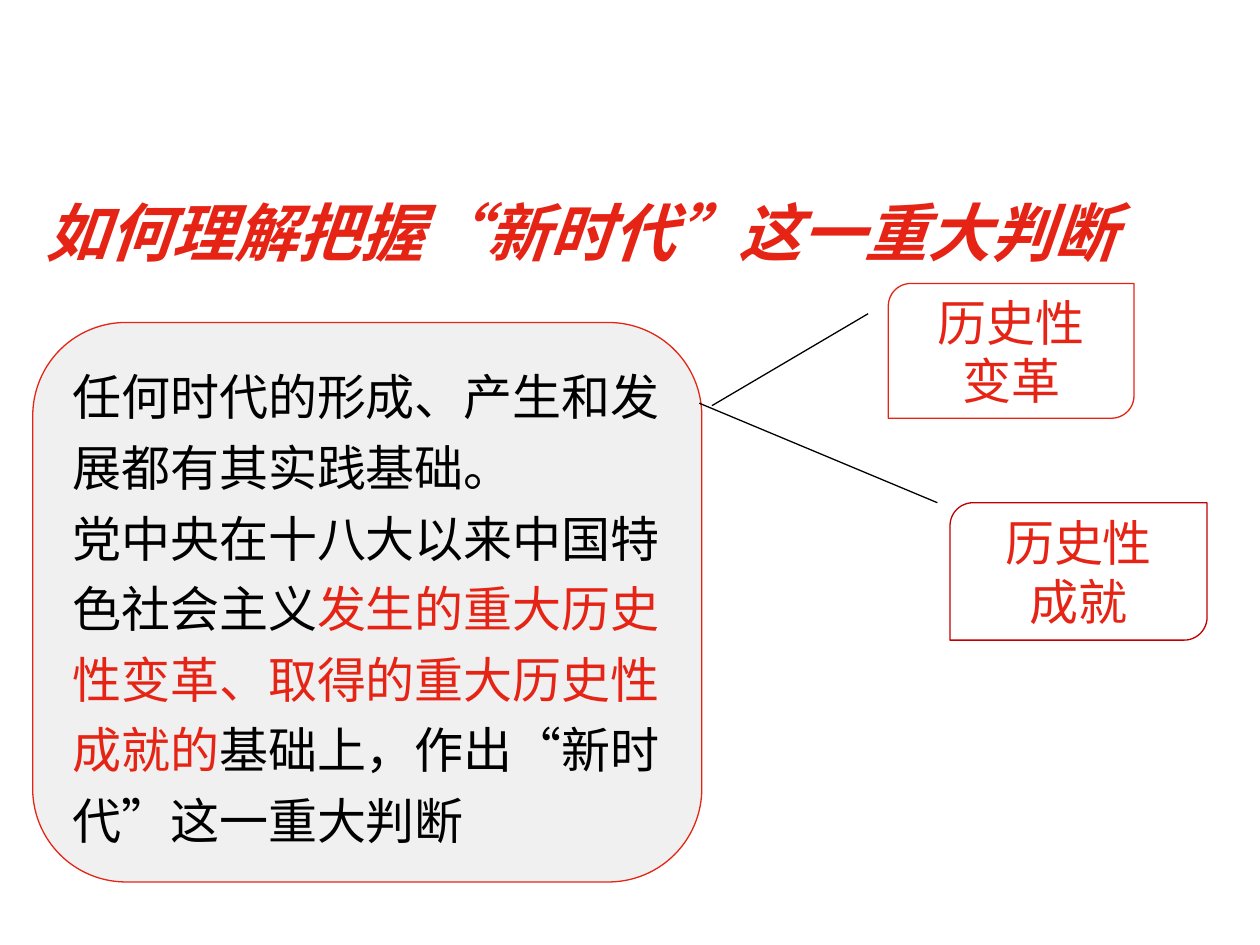
from lxml import etree
from pptx import Presentation
from pptx.dml.color import RGBColor
from pptx.enum.shapes import MSO_CONNECTOR as Connector, MSO_SHAPE as Shape
from pptx.enum.text import MSO_ANCHOR as Anchor, PP_ALIGN as Align
from pptx.oxml.ns import qn
from pptx.util import Inches, Pt

RED, DARK_RED, BLACK = "E52415", "C00000", "000000"
GREY, WHITE = "F0F0F0", "FFFFFF"
CHINESE_FONT = "Noto Sans CJK SC"


def color(value):
    return RGBColor.from_string(value)


def add_run(paragraph, text, size=28, font="Arial", fill=RED, bold=False, italic=False):
    run = paragraph.add_run()
    run.text = text
    run.font.size = Pt(size)
    run.font.name = font
    run.font.bold = bold
    run.font.italic = italic
    run.font.color.rgb = color(fill)
    properties = run._r.get_or_add_rPr()
    properties.set("lang", "zh-CN")
    latin = properties.find(qn("a:latin"))
    east_asian = etree.Element(qn("a:ea"), typeface=CHINESE_FONT)
    latin.addnext(east_asian)


class SlideBuilder:
    line_width = Pt(0.75)

    def __init__(self, slide):
        self.slide = slide

    def fill_text(self, frame, paragraphs, align=Align.LEFT, spacing=1.0):
        frame.word_wrap = True
        for index, runs in enumerate(paragraphs):
            paragraph = frame.add_paragraph() if index else frame.paragraphs[0]
            paragraph.alignment = align
            paragraph.line_spacing = spacing
            for text, style in runs:
                add_run(paragraph, text, **style)

    def text(self, bounds, paragraphs, **layout):
        box = self.slide.shapes.add_textbox(*map(Inches, bounds))
        self.fill_text(box.text_frame, paragraphs, **layout)

    def panel(self, kind, bounds, paragraphs, fill=WHITE, line=RED, **layout):
        shape = self.slide.shapes.add_shape(kind, *map(Inches, bounds))
        shape.shadow.inherit = False
        shape.fill.solid()
        shape.fill.fore_color.rgb = color(fill)
        shape.line.color.rgb = color(line)
        shape.line.width = self.line_width
        shape.text_frame.vertical_anchor = Anchor.MIDDLE
        self.fill_text(shape.text_frame, paragraphs, **layout)

    def connector(self, start, end):
        points = map(Inches, (*start, *end))
        line = self.slide.shapes.add_connector(Connector.STRAIGHT, *points)
        line.line.color.rgb = color(BLACK)
        line.line.width = self.line_width
        etree.SubElement(line._element.spPr, qn("a:effectLst"))


def main():
    presentation = Presentation()
    presentation.slide_width = Inches(10)
    presentation.slide_height = Inches(7.5)
    builder = SlideBuilder(presentation.slides.add_slide(presentation.slide_layouts[6]))

    title_style = dict(size=36, font=CHINESE_FONT, bold=True, italic=True)
    builder.text(
        (0.26, 1.19, 9.48, 1.01),
        [[("如何理解把握“新时代”这一重大判断", title_style)]],
        spacing=1.5,
    )

    plain, emphasis = dict(fill=BLACK), dict(fill=RED)
    builder.panel(
        Shape.ROUNDED_RECTANGLE,
        (0.26, 2.56, 5.31, 4.44),
        [
            [("任何时代的形成、产生和发展都有其实践基础。", plain)],
            [
                ("党中央在十八大以来中国特色社会主义", plain),
                ("发生的重大历史性变革、取得的重大历史性成就的", emphasis),
                ("基础上，作出“新时代”这一重大判断", plain),
            ],
        ],
        fill=GREY,
        spacing=1.2,
    )

    builder.connector((5.65, 3.22), (6.89, 2.49))
    builder.connector((5.55, 3.2), (7.44, 3.99))

    outcomes = [
        ((7.05, 2.25, 1.95, 1.07), "变革", "Arial", RED),
        ((7.54, 3.99, 2.04, 1.09), "成就", CHINESE_FONT, DARK_RED),
    ]
    for bounds, outcome, font, line in outcomes:
        builder.panel(
            Shape.ROUND_2_DIAG_RECTANGLE,
            bounds,
            [[("历史性", {})], [(outcome, dict(font=font))]],
            line=line,
            align=Align.CENTER,
        )

    presentation.save("out.pptx")


if __name__ == "__main__":
    main()
